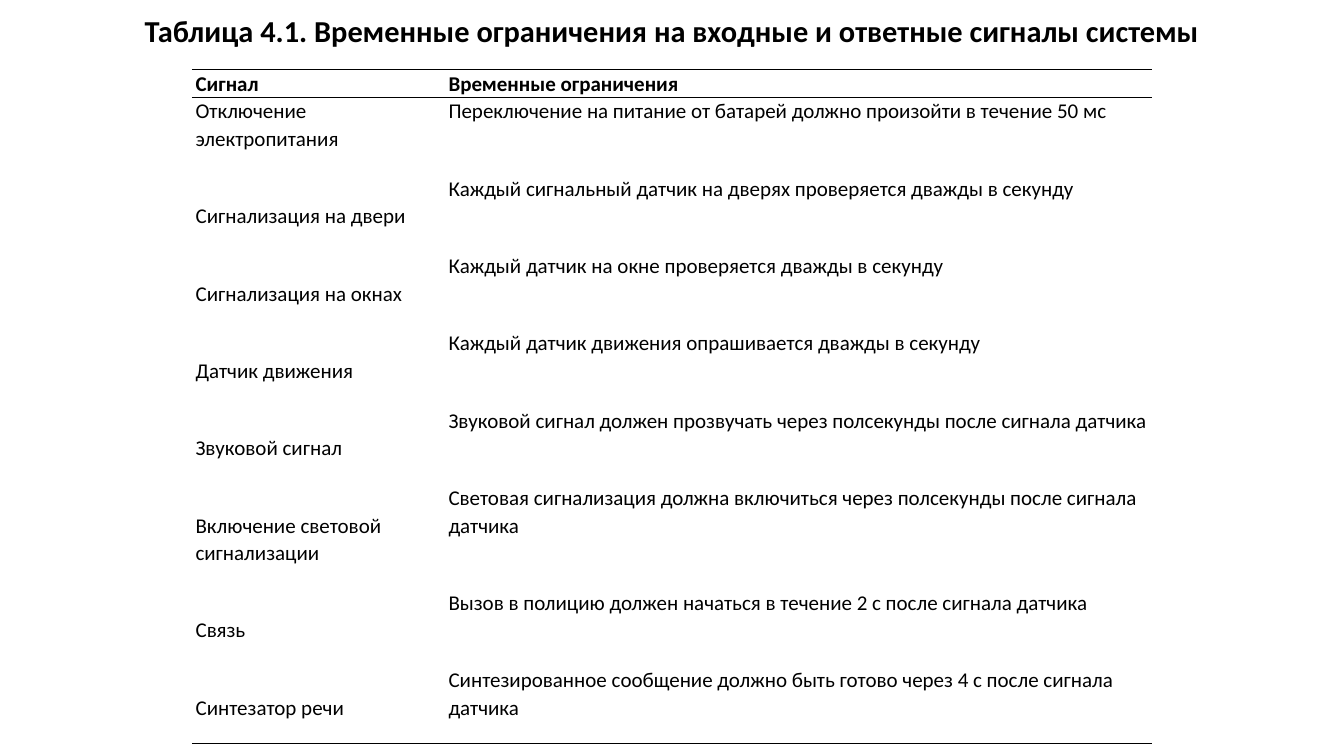
from lxml import etree
from pptx import Presentation
from pptx.dml.color import RGBColor
from pptx.enum.text import MSO_ANCHOR, MSO_AUTO_SIZE, PP_ALIGN
from pptx.oxml.ns import qn
from pptx.util import Pt

TITLE = "Таблица 4.1. Временные ограничения на входные и ответные сигналы системы"
HEADINGS = ("Сигнал", "Временные ограничения")
CONSTRAINTS = [
    ("Отключение электропитания",
     "Переключение на питание от батарей должно произойти в течение 50 мс"),
    ("Сигнализация на двери",
     "Каждый сигнальный датчик на дверях проверяется дважды в секунду"),
    ("Сигнализация на окнах",
     "Каждый датчик на окне проверяется дважды в секунду"),
    ("Датчик движения",
     "Каждый датчик движения опрашивается дважды в секунду"),
    ("Звуковой сигнал",
     "Звуковой сигнал должен прозвучать через полсекунды после сигнала датчика"),
    ("Включение световой сигнализации",
     "Световая сигнализация должна включиться через полсекунды после сигнала датчика"),
    ("Связь",
     "Вызов в полицию должен начаться в течение 2 с после сигнала датчика"),
    ("Синтезатор речи",
     "Синтезированное сообщение должно быть готово через 4 с после сигнала датчика"),
]


def color(value):
    return RGBColor.from_string(value)


class SlideBuilder:
    font_name = "Calibri"
    ink = "000000"
    paper = "FFFFFF"
    title_size = 21.7
    table_size = 15
    paragraph_gap = 8
    entry_gap = 35.6

    def __init__(self, presentation):
        self.slide = presentation.slides.add_slide(presentation.slide_layouts[5])

    def style_font(self, paragraph, size, bold):
        font = paragraph.font
        font.name = self.font_name
        font.size = Pt(size)
        font.bold = bold
        font.color.rgb = color(self.ink)

    def title(self, text, left, top, width, height):
        shape = self.slide.shapes.title
        shape.left, shape.top = Pt(left), Pt(top)
        shape.width, shape.height = Pt(width), Pt(height)
        frame = shape.text_frame
        frame.text = text
        frame.word_wrap = True
        frame.auto_size = MSO_AUTO_SIZE.NONE
        frame.vertical_anchor = MSO_ANCHOR.TOP
        paragraph = frame.paragraphs[0]
        paragraph.alignment = PP_ALIGN.CENTER
        paragraph.line_spacing = 0.7
        paragraph.space_before = Pt(10)
        self.style_font(paragraph, self.title_size, True)

    def table(self, rows, left, top, column_widths, row_heights):
        """Add a table whose cells are lists of paragraphs; the first row is bold."""
        table = self.slide.shapes.add_table(
            len(rows), len(column_widths), Pt(left), Pt(top),
            Pt(sum(column_widths)), Pt(sum(row_heights))).table
        table.first_row = table.horz_banding = False
        for column, width in zip(table.columns, column_widths):
            column.width = Pt(width)
        for row, height in zip(table.rows, row_heights):
            row.height = Pt(height)
        for row_index, row in enumerate(rows):
            for column_index, entries in enumerate(row):
                self.fill_cell(table.cell(row_index, column_index), entries, row_index == 0)

    def fill_cell(self, cell, entries, bold):
        cell.margin_left = cell.margin_right = Pt(2.7)
        cell.margin_top = cell.margin_bottom = 0
        cell.fill.solid()
        cell.fill.fore_color.rgb = color(self.paper)
        self.rule_cell(cell)
        frame = cell.text_frame
        frame.text = "\n".join(entries)
        for paragraph in frame.paragraphs:
            paragraph.line_spacing = 1.07
            paragraph.space_after = Pt(self.entry_gap)
            self.style_font(paragraph, self.table_size, bold)
        frame.paragraphs[-1].space_after = Pt(self.paragraph_gap)

    def rule_cell(self, cell):
        """Draw lines above and below the cell and none at its sides."""
        properties = cell._tc.get_or_add_tcPr()
        for position, side in enumerate(("lnL", "lnR", "lnT", "lnB")):
            line = etree.Element(qn(f"a:{side}"), w=str(Pt(1)))
            if side in ("lnT", "lnB"):
                fill = etree.SubElement(line, qn("a:solidFill"))
                etree.SubElement(fill, qn("a:srgbClr"), val=self.ink)
            else:
                etree.SubElement(line, qn("a:noFill"))
            properties.insert(position, line)


def main():
    presentation = Presentation()
    presentation.slide_width, presentation.slide_height = Pt(960), Pt(540)
    builder = SlideBuilder(presentation)
    builder.title(TITLE, 66, 12.2, 828, 37.4)
    heading_row = [[heading] for heading in HEADINGS]
    constraint_row = list(zip(*CONSTRAINTS))
    builder.table([heading_row, constraint_row], 137, 49.7, (180.7, 505.5), (19.4, 461.5))
    presentation.save("out.pptx")


if __name__ == "__main__":
    main()
